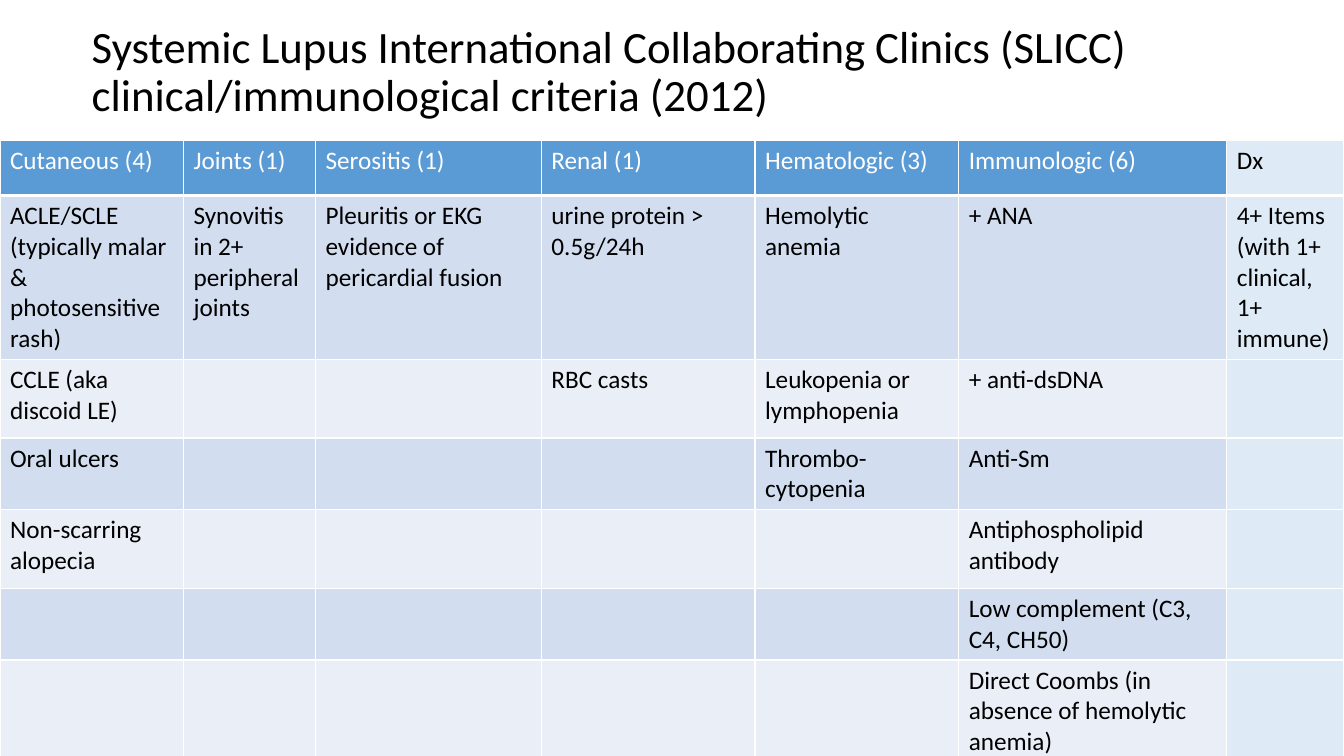
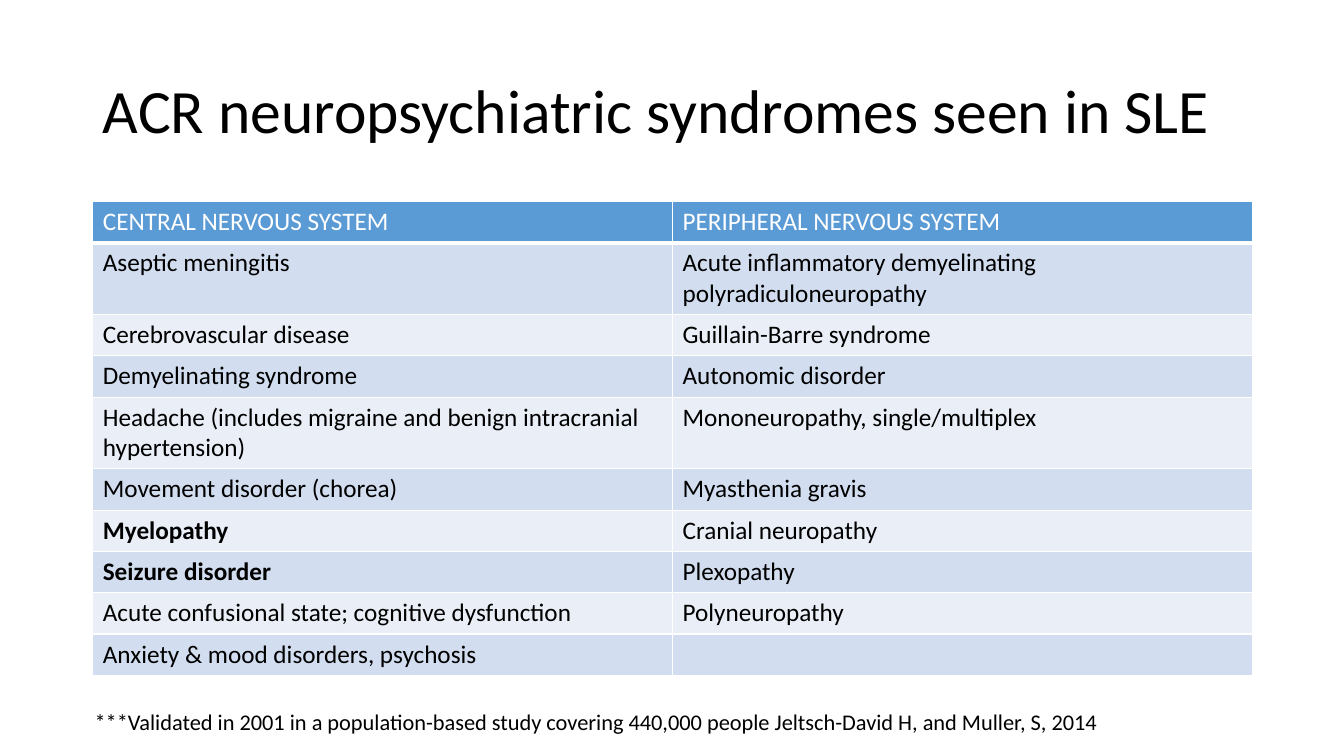
from dataclasses import dataclass

from pptx import Presentation
from pptx.dml.color import RGBColor
from pptx.enum.text import MSO_ANCHOR, MSO_AUTO_SIZE, PP_ALIGN
from pptx.oxml.ns import qn
from pptx.util import Inches, Pt
from lxml.etree import SubElement


@dataclass(frozen=True)
class Theme:
    font: str = "Calibri"
    ink: str = "000000"
    white: str = "FFFFFF"
    header: str = "5B9BD5"
    bands: tuple = ("D2DEEF", "EAEFF7")
    verdict: str = "DEEBF7"
    body: int = 18
    note: int = 16
    rule: int = 1
    header_rule: int = 3


T = Theme()
WIDTH, HEIGHT = 13.33, 7.5

CRITERIA = {
    "title": "Systemic Lupus International Collaborating Clinics (SLICC) "
             "clinical/immunological criteria (2012)",
    "title_box": (0.81, 0, 11.5, 1.45),
    "title_size": 32,
    "origin": (0, 1.39),
    "cols": (1.82, 1.31, 2.24, 2.12, 2.02, 2.66, 1.16),
    "heights": (0.55, 1.51, 0.78, 0.66, 0.78, 0.66, 0.95),
    "verdict_col": 6,
    "rows": [
        ("Cutaneous (4)", "Joints (1)", "Serositis (1)", "Renal (1)",
         "Hematologic (3)", "Immunologic (6)", "Dx"),
        ("ACLE/SCLE (typically malar & photosensitive rash)",
         "Synovitis in 2+ peripheral joints",
         "Pleuritis or EKG evidence of pericardial fusion",
         "urine protein > 0.5g/24h", "Hemolytic anemia", "+ ANA",
         "4+ Items (with 1+ clinical, 1+ immune)"),
        ("CCLE (aka discoid LE)", "", "", "RBC casts",
         "Leukopenia or lymphopenia", "+ anti-dsDNA", ""),
        ("Oral ulcers", "", "", "", "Thrombo- cytopenia", "Anti-Sm", ""),
        ("Non-scarring alopecia", "", "", "", "", "Antiphospholipid antibody", ""),
        ("", "", "", "", "", "Low complement (C3, C4, CH50)", ""),
        ("", "", "", "", "", "Direct Coombs (in absence of hemolytic anemia)", ""),
    ],
}

SYNDROMES = {
    "title": "ACR neuropsychiatric syndromes seen in SLE",
    "title_box": (0.92, 0.4, 11.5, 1.45),
    "title_size": 44,
    "origin": (0.92, 2),
    "cols": (5.75,) * 2,
    "heights": (0.41,) * 10,
    "bold": ("Myelopathy", "Seizure disorder"),
    "rows": [
        ("CENTRAL NERVOUS SYSTEM", "PERIPHERAL NERVOUS SYSTEM"),
        ("Aseptic meningitis",
         "Acute inflammatory demyelinating polyradiculoneuropathy"),
        ("Cerebrovascular disease", "Guillain-Barre syndrome"),
        ("Demyelinating syndrome", "Autonomic disorder"),
        ("Headache (includes migraine and benign intracranial hypertension)",
         "Mononeuropathy, single/multiplex"),
        ("Movement disorder (chorea)", "Myasthenia gravis"),
        ("Myelopathy", "Cranial neuropathy"),
        ("Seizure disorder", "Plexopathy"),
        ("Acute confusional state; cognitive dysfunction", "Polyneuropathy"),
        ("Anxiety & mood disorders, psychosis", ""),
    ],
    "note": "***Validated in 2001 in a population-based study covering "
            "440,000 people Jeltsch-David H, and Muller, S, 2014",
    "note_box": (0.84, 6.98, 11.56, 0.37),
}


def add_run(p, text, size, color=T.ink, bold=False):
    r = p.add_run()
    r.text = text
    r.font.name = T.font
    r.font.size = Pt(size)
    r.font.bold = bold
    r.font.color.rgb = RGBColor.from_string(color)


def add_title(slide, text, box, size):
    sp = slide.shapes.title
    sp.left, sp.top, sp.width, sp.height = map(Inches, box)
    tf = sp.text_frame
    tf.word_wrap = True
    tf.auto_size = MSO_AUTO_SIZE.NONE
    tf.vertical_anchor = MSO_ANCHOR.MIDDLE
    p = tf.paragraphs[0]
    p.alignment = PP_ALIGN.LEFT
    p.line_spacing = 0.9
    add_run(p, text, size)


def set_borders(cell, bottom):
    props = cell._tc.get_or_add_tcPr()
    for side, width in zip("LRTB", (T.rule, T.rule, T.rule, bottom)):
        ln = SubElement(props, qn(f"a:ln{side}"), w=str(Pt(width)))
        SubElement(SubElement(ln, qn("a:solidFill")), qn("a:srgbClr"), val=T.white)


def add_grid(slide, data):
    rows, cols, heights = data["rows"], data["cols"], data["heights"]
    frame = slide.shapes.add_table(
        len(rows), len(cols),
        *map(Inches, (*data["origin"], sum(cols), sum(heights))))
    table = frame.table
    table.first_row = table.horz_banding = False
    for column, width in zip(table.columns, cols):
        column.width = Inches(width)
    for row, height in zip(table.rows, heights):
        row.height = Inches(height)
    for i, row in enumerate(rows):
        for j, text in enumerate(row):
            cell = table.cell(i, j)
            is_verdict = j == data.get("verdict_col")
            fill = T.header if i == 0 else T.bands[(i - 1) % 2]
            color = T.white if i == 0 and not is_verdict else T.ink
            set_borders(cell, T.rule if i else T.header_rule)
            cell.fill.solid()
            cell.fill.fore_color.rgb = RGBColor.from_string(
                T.verdict if is_verdict else fill)
            p = cell.text_frame.paragraphs[0]
            p.font.size = Pt(T.body)
            if text:
                add_run(p, text, T.body, color, text in data.get("bold", ()))


def add_note(slide, text, box):
    tf = slide.shapes.add_textbox(*map(Inches, box)).text_frame
    tf.word_wrap = True
    tf.auto_size = MSO_AUTO_SIZE.SHAPE_TO_FIT_TEXT
    add_run(tf.paragraphs[0], text, T.note)


def main():
    prs = Presentation()
    prs.slide_width, prs.slide_height = Inches(WIDTH), Inches(HEIGHT)
    for data in (CRITERIA, SYNDROMES):
        slide = prs.slides.add_slide(prs.slide_layouts.get_by_name("Title Only"))
        add_title(slide, data["title"], data["title_box"], data["title_size"])
        add_grid(slide, data)
        if "note" in data:
            add_note(slide, data["note"], data["note_box"])
    prs.save("out.pptx")


if __name__ == "__main__":
    main()
